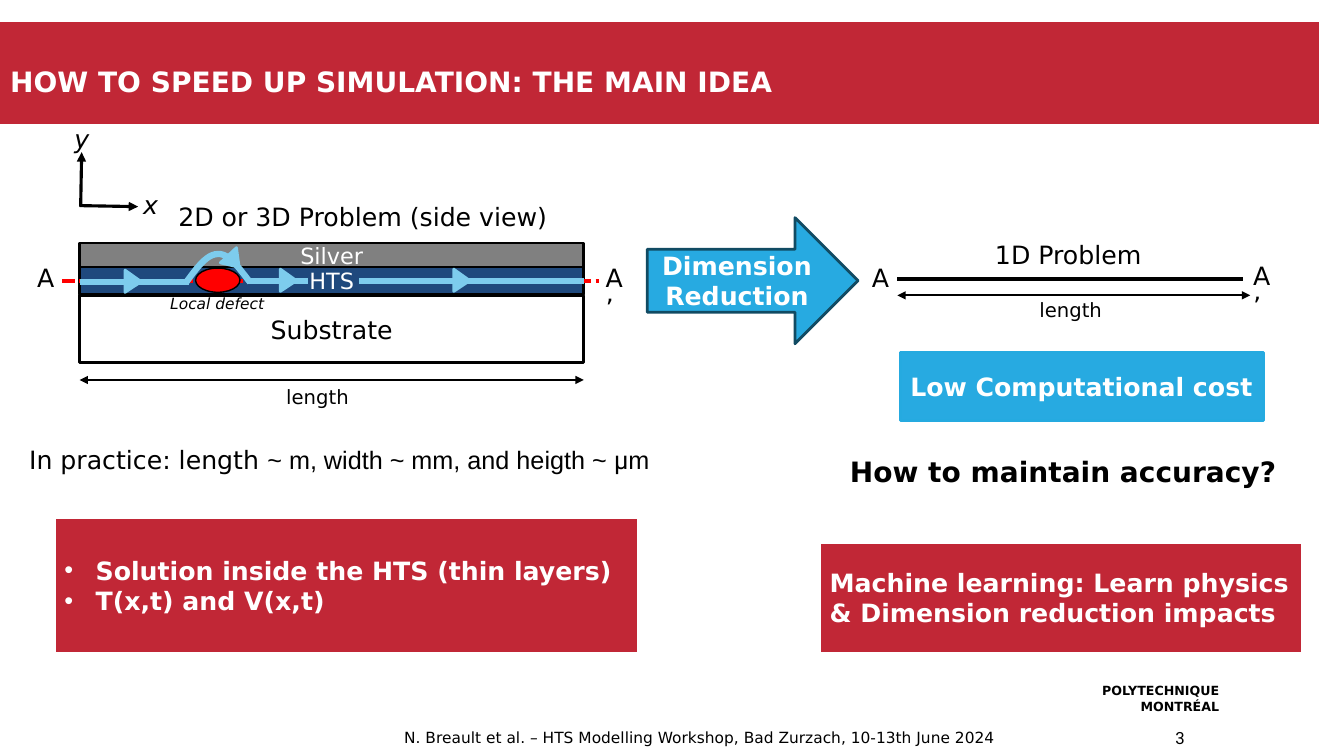
import lxml.etree
import pptx
import pptx.dml.color
import pptx.enum.dml
import pptx.enum.shapes
import pptx.enum.text
import pptx.oxml.ns
import pptx.util

SHAPE = pptx.enum.shapes.MSO_SHAPE
ALIGN = pptx.enum.text.PP_ALIGN
ANCHOR = pptx.enum.text.MSO_ANCHOR
color = pptx.dml.color.RGBColor.from_string
qn = pptx.oxml.ns.qn
RED, BLUE, CURRENT = "C12736", "27AAE1", "7DCCED"
BLACK, WHITE = "000000", "FFFFFF"
SANS = "DejaVu Sans"

deck = pptx.Presentation()
deck.slide_width = pptx.util.Inches(13.33)
deck.slide_height = pptx.util.Inches(7.5)
cell = deck.slide_height / 75
slide = deck.slides.add_slide(deck.slide_layouts[5])
shapes = slide.shapes


def block(kind, place, fill, outline=None, weight=2):
    shape = shapes.add_shape(kind, *[round(v * cell) for v in place])
    shape.shadow.inherit = False
    shape.fill.solid()
    shape.fill.fore_color.rgb = color(fill)
    if outline:
        shape.line.color.rgb = color(outline)
        shape.line.width = pptx.util.Pt(weight)
    else:
        shape.line.fill.background()
    return shape


def write(shape, text, size, ink=BLACK, align=ALIGN.LEFT, anchor=ANCHOR.TOP,
          bold=False, italic=False, font=SANS, bullet=False):
    frame = shape.text_frame
    frame.text = text
    frame.word_wrap = True
    frame.auto_size = pptx.enum.text.MSO_AUTO_SIZE.NONE
    frame.vertical_anchor = anchor
    for paragraph in frame.paragraphs:
        if bullet:
            properties = paragraph._p.get_or_add_pPr()
            hang = round(3.1 * cell)
            properties.set("marL", str(hang))
            properties.set("indent", str(-hang))
            lxml.etree.SubElement(properties, qn("a:buFont"), typeface="Arial")
            lxml.etree.SubElement(properties, qn("a:buChar"), char="•")
        paragraph.alignment = align
        paragraph.font.name = font
        paragraph.font.size = pptx.util.Pt(size)
        paragraph.font.bold = bold
        paragraph.font.italic = italic
        paragraph.font.color.rgb = color(ink)


block(SHAPE.RECTANGLE, (0, 2.2, 130.8, 10.1), RED)
title = shapes.title
shapes._spTree.append(title._element)
title.left, title.top, title.width, title.height = [
    round(v * cell) for v in (0, 1.8, 90, 12.5)]
write(title, "HOW TO SPEED UP SIMULATION: THE MAIN IDEA", 20, WHITE,
      anchor=ANCHOR.MIDDLE, bold=True)

tape_left, tape_width = 7.9, 50
tape_right = tape_left + tape_width
for layer, top, height, fill, size, ink in [
    ("Silver", 24.1, 2.5, "808080", 16, WHITE),
    ("HTS", 26.5, 2.7, "1F497D", 16, WHITE),
    ("Substrate", 29.3, 6.7, WHITE, 18, BLACK),
]:
    write(block(SHAPE.RECTANGLE, (tape_left, top, tape_width, height), fill, BLACK),
          layer, size, ink, ALIGN.CENTER, ANCHOR.MIDDLE)

for kind, place, fill, outline, text, align, bullet in [
    (SHAPE.RECTANGLE, (5.4, 51.3, 57.9, 13.5), RED, WHITE,
     "Solution inside the HTS (thin layers)\nT(x,t) and V(x,t)", ALIGN.LEFT, True),
    (SHAPE.RIGHT_ARROW, (64.2, 21.6, 20.9, 12.5), BLUE, "114B63",
     "Dimension Reduction", ALIGN.CENTER, False),
    (SHAPE.RECTANGLE, (89.3, 35, 36, 6.7), BLUE, "25AAE0",
     "Low Computational cost", ALIGN.LEFT, False),
    (SHAPE.RECTANGLE, (81.3, 53.8, 47.9, 11), RED, WHITE,
     "Machine learning: Learn physics & Dimension reduction impacts", ALIGN.LEFT, False),
]:
    write(block(kind, place, fill, outline), text, 18, WHITE, align,
          ANCHOR.MIDDLE, bold=True, bullet=bullet)

for start, end, ink, weight, ends, dashed in [
    ((tape_left, 37.7), (tape_right, 37.7), BLACK, 1.5, ("headEnd", "tailEnd"), False),
    ((89, 29.3), (124, 29.3), BLACK, 1.5, ("headEnd", "tailEnd"), False),
    ((8, 20.5), (8.1, 15.1), BLACK, 2.25, ("tailEnd",), False),
    ((7.9, 20.4), (13.7, 20.5), BLACK, 2.25, ("tailEnd",), False),
    ((89, 27.7), (123.3, 27.7), BLACK, 3, (), False),
    ((6.2, 27.9), (30, 27.9), "FF0000", 3, (), True),
    ((35.7, 27.9), (59.4, 27.9), "FF0000", 3, (), True),
    ((tape_left, 28), (18.7, 28), CURRENT, 4.5, (), False),
    ((24.5, 27.9), (30.5, 27.9), CURRENT, 4.5, (), False),
    ((35.6, 27.9), (tape_right, 27.9), CURRENT, 4.5, (), False),
]:
    stroke = shapes.add_connector(pptx.enum.shapes.MSO_CONNECTOR.STRAIGHT,
                                  *[round(v * cell) for v in start + end])
    stroke.line.color.rgb = color(ink)
    stroke.line.width = pptx.util.Pt(weight)
    if dashed:
        stroke.line.dash_style = pptx.enum.dml.MSO_LINE.SQUARE_DOT
    for tip in ends:
        lxml.etree.SubElement(stroke.line._get_or_add_ln(), qn("a:" + tip), type="triangle")
    lxml.etree.SubElement(stroke._element.spPr, qn("a:effectLst"))

block(SHAPE.OVAL, (19.4, 26.6, 4.4, 2.4), "FF0000", BLACK, 1)

detour_points = []
for curve in [((18.4, 28.1), (19.5, 26.6), (20.5, 25.2), (21.6, 25.2)),
              ((21.6, 25.2), (22.7, 25.1), (23.7, 26.6), (24.8, 28))]:
    for step in range(13):
        t = step / 12
        shares = ((1 - t) ** 3, 3 * t * (1 - t) ** 2, 3 * t ** 2 * (1 - t), t ** 3)
        detour_points.append([round(cell * sum(s * point[axis] for s, point in zip(shares, curve)))
                              for axis in (0, 1)])
builder = shapes.build_freeform(*detour_points[0])
builder.add_line_segments(detour_points[1:], close=False)
detour = builder.convert_to_shape()
detour.shadow.inherit = False
detour.fill.background()
detour.line.color.rgb = color(CURRENT)
detour.line.width = pptx.util.Pt(4.5)

for left, top, turn in [(12.1, 27.1, 90), (27.5, 27, 90), (44.7, 27, 90), (22.1, 25.1, 136.7)]:
    flow = block(SHAPE.ISOSCELES_TRIANGLE, (left, top, 2.2, 1.6), CURRENT, CURRENT)
    flow.adjustments[0] = 0.52
    flow.rotation = turn

plain, slanted, strong = {}, {"italic": True}, {"bold": True}
centered = {"align": ALIGN.CENTER}
for text, place, size, style in [
    ("POLYTECHNIQUE\nMONTRÉAL", (97.5, 67.3, 24.4, 4), 9, {"bold": True, "align": ALIGN.RIGHT}),
    ("3", (115.6, 71.7, 5.6, 3.3), 12, {"font": "Roboto"}),
    ("N. Breault et al. – HTS Modelling Workshop, Bad Zurzach, 10-13th June 2024",
     (22.2, 71.7, 94.4, 3.3), 11, centered),
    ("length", (27.4, 37.7, 9, 3.4), 14, plain),
    ("length", (102.1, 29.1, 10.9, 3.4), 14, plain),
    ("x", (13.2, 18.3, 2.8, 4), 18, slanted),
    ("y", (6.4, 11.7, 3.5, 4), 18, slanted),
    ("A", (2.7, 25.5, 3.7, 4), 18, plain),
    ("A’", (59.1, 25.5, 4.4, 4), 18, plain),
    ("A", (85.5, 25.5, 3.7, 4), 18, plain),
    ("A’", (123.3, 25.3, 4.4, 4), 18, plain),
    ("2D or 3D Problem (side view)", (16.7, 19.5, 39.7, 4), 18, plain),
    ("1D Problem", (97.7, 23.3, 16.8, 4), 18, plain),
    ("How to maintain accuracy?", (83.3, 44.6, 47.9, 4.4), 20, strong),
    ("Local defect", (15.9, 28.7, 11.3, 2.9), 11, slanted),
    ("In practice: length ", (1.9, 43.6, 71.1, 4), 18, plain),
]:
    label = shapes.add_textbox(*[round(v * cell) for v in place])
    write(label, text, size, **style)

practice = label.text_frame.paragraphs[0]
for text, font in [("~ m, width ~ mm, and heigth ~ ", "Arial"), ("µ", "Roboto"), ("m", "Arial")]:
    scale = practice.add_run()
    scale.text = text
    scale.font.name = font

deck.save("out.pptx")
